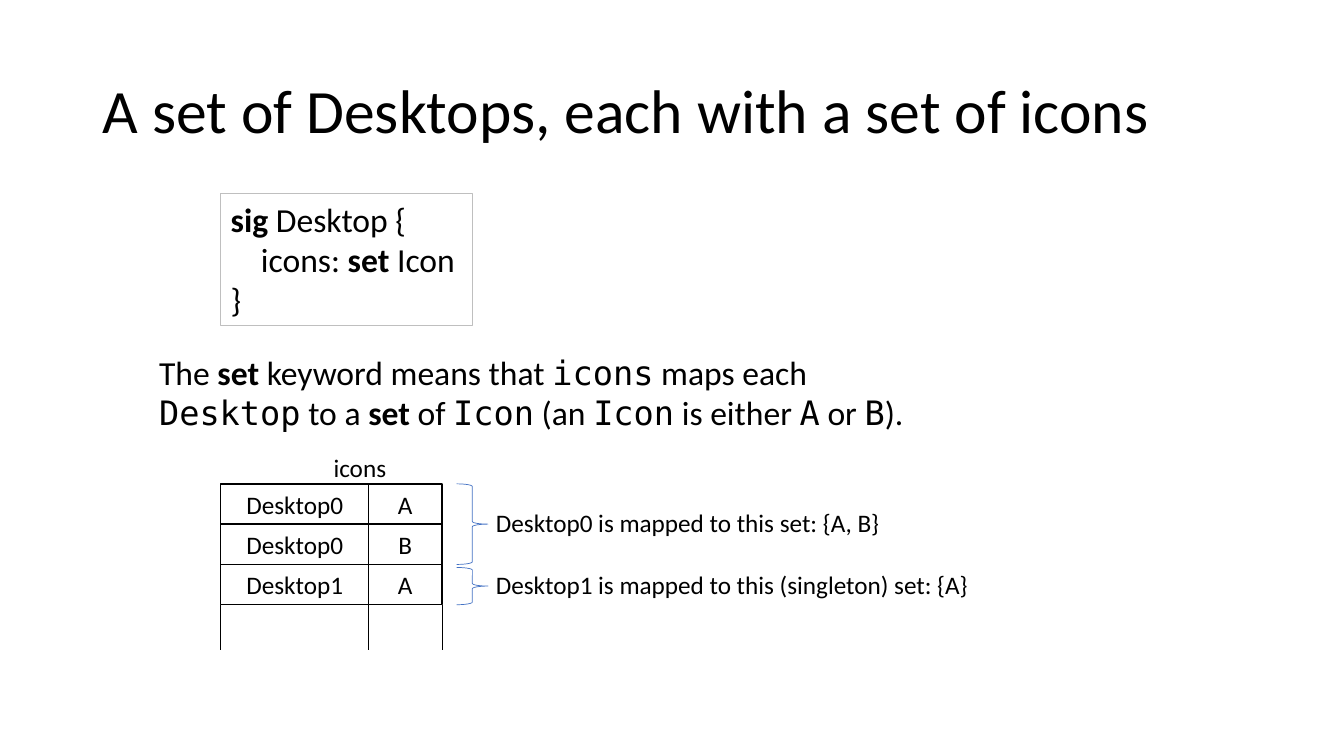
from dataclasses import dataclass

from lxml.etree import SubElement
from pptx import Presentation
from pptx.dml.color import RGBColor
from pptx.enum.shapes import MSO_CONNECTOR, MSO_SHAPE
from pptx.enum.text import MSO_ANCHOR, MSO_AUTO_SIZE, PP_ALIGN
from pptx.oxml.ns import qn
from pptx.util import Inches, Pt

WIDTH, HEIGHT = 13.33, 7.5
SANS, MONO = "Calibri", "DejaVu Sans Mono"
BLACK, WHITE, GREY, BLUE = "000000", "FFFFFF", "BFBFBF", "4472C4"

# Relation table, in percent of the slide
LEFT, TOP, ROW_H = 16.43, 64, 5.33
COL_W = [11, 5.45]
ROWS = [("Desktop0", "A"), ("Desktop0", "B"), ("Desktop1", "A")]
TAIL_H = 6
BRACE_LEFT, BRACE_W, BRACE_GAP, LABEL_LEFT = 33.98, 2.33, 0.4, 36.16


@dataclass
class Box:
    """A rectangle in percent of the slide's width and height."""
    left: float
    top: float
    width: float
    height: float

    def emu(self) -> tuple:
        return (across(self.left), down(self.top),
                across(self.width), down(self.height))


@dataclass
class Run:
    text: str
    bold: bool = False
    font: str = SANS


@dataclass
class Mapping:
    first_row: int
    row_count: int
    label: str
    label_width: float


MAPPINGS = [
    Mapping(0, 2, "Desktop0 is mapped to this set: {A, B}", 30.76),
    Mapping(2, 1, "Desktop1 is mapped to this (singleton) set: {A}", 36.9),
]
CODE = [
    [Run("sig", bold=True), Run(" Desktop {")],
    [Run("icons: "), Run("set", bold=True), Run(" Icon")],
    [Run("}")],
]
EXPLANATION = [
    Run("The "), Run("set", bold=True), Run(" keyword means that "),
    Run("icons", font=MONO), Run(" maps each "), Run("Desktop", font=MONO),
    Run(" to a "), Run("set", bold=True), Run(" of "), Run("Icon", font=MONO),
    Run(" (an "), Run("Icon", font=MONO), Run(" is either "),
    Run("A", font=MONO), Run(" or "), Run("B", font=MONO), Run(")."),
]


def across(percent: float) -> int:
    return Inches(WIDTH * percent / 100)


def down(percent: float) -> int:
    return Inches(HEIGHT * percent / 100)


def rgb(value: str) -> RGBColor:
    return RGBColor.from_string(value)


def write(p, runs: list[Run], size: float) -> None:
    for run in runs:
        r = p.add_run()
        r.text = run.text
        r.font.name, r.font.size, r.font.bold = run.font, Pt(size), run.bold
        r.font.color.rgb = rgb(BLACK)


def add_text(slide, box: Box, runs: list[Run], size: float, wrap: bool = True) -> None:
    tf = slide.shapes.add_textbox(*box.emu()).text_frame
    tf.word_wrap = wrap
    tf.auto_size = MSO_AUTO_SIZE.SHAPE_TO_FIT_TEXT
    write(tf.paragraphs[0], runs, size)


def add_outline(slide, kind, box: Box, line: str, weight: float, fill: str = ""):
    sp = slide.shapes.add_shape(kind, *box.emu())
    sp.shadow.inherit = False
    sp.line.color.rgb, sp.line.width = rgb(line), Pt(weight)
    if fill:
        sp.fill.solid()
        sp.fill.fore_color.rgb = rgb(fill)
    else:
        sp.fill.background()
    return sp


def add_title(slide, text: str) -> None:
    title = slide.shapes.title
    title.left, title.top, title.width, title.height = Box(6.9, 5.33, 86.27, 19.33).emu()
    tf = title.text_frame
    tf.vertical_anchor = MSO_ANCHOR.MIDDLE
    p = tf.paragraphs[0]
    p.alignment, p.line_spacing = PP_ALIGN.LEFT, 0.9
    write(p, [Run(text)], 44)


def add_code(slide) -> None:
    sp = add_outline(slide, MSO_SHAPE.RECTANGLE, Box(LEFT, 25.6, 18.75, 17.47), GREY, 0.75)
    tf = sp.text_frame
    tf.vertical_anchor = MSO_ANCHOR.TOP
    tf.auto_size = MSO_AUTO_SIZE.SHAPE_TO_FIT_TEXT
    for i, runs in enumerate(CODE):
        p = tf.paragraphs[0] if i == 0 else tf.add_paragraph()
        p.alignment = PP_ALIGN.LEFT
        write(p, runs, 24)
    # Indent the field declaration
    tf.paragraphs[1]._p.get_or_add_pPr().set("marL", str(Inches(0.3)))


def add_relation(slide) -> None:
    edges = [LEFT, LEFT + COL_W[0], LEFT + sum(COL_W)]
    # Cells
    for col, width in enumerate(COL_W):
        for row, values in enumerate(ROWS):
            box = Box(edges[col], TOP + row * ROW_H, width, ROW_H)
            sp = add_outline(slide, MSO_SHAPE.RECTANGLE, box, BLACK, 1, WHITE)
            tf = sp.text_frame
            tf.vertical_anchor = MSO_ANCHOR.MIDDLE
            tf.paragraphs[0].alignment = PP_ALIGN.CENTER
            write(tf.paragraphs[0], [Run(values[col])], 18)
    # Open column lines below the last row
    bottom = TOP + len(ROWS) * ROW_H
    for edge in edges:
        line = slide.shapes.add_connector(
            MSO_CONNECTOR.STRAIGHT, across(edge), down(bottom),
            across(edge), down(bottom + TAIL_H))
        line.line.color.rgb, line.line.width = rgb(BLACK), Pt(0.5)
        SubElement(line._element.spPr, qn("a:effectLst"))
    # Heading
    add_text(slide, Box(24.08, 59.2, 5.48, ROW_H), [Run("icons")], 18, wrap=False)


def add_mapping(slide, mapping: Mapping) -> None:
    gap = BRACE_GAP if mapping.first_row else 0
    top = TOP + mapping.first_row * ROW_H + gap
    height = mapping.row_count * ROW_H - gap
    add_outline(slide, MSO_SHAPE.RIGHT_BRACE,
                Box(BRACE_LEFT, top, BRACE_W, height), BLUE, 0.5)
    label_top = top + (height - ROW_H) / 2 - 0.2
    add_text(slide, Box(LABEL_LEFT, label_top, mapping.label_width, ROW_H),
             [Run(mapping.label)], 18)


def main() -> None:
    prs = Presentation()
    prs.slide_width, prs.slide_height = Inches(WIDTH), Inches(HEIGHT)
    slide = prs.slides.add_slide(prs.slide_layouts[5])
    add_title(slide, "A set of Desktops, each with a set of icons")
    add_code(slide)
    add_text(slide, Box(11.1, 45.87, 59.04, 12.13), EXPLANATION, 24)
    add_relation(slide)
    for mapping in MAPPINGS:
        add_mapping(slide, mapping)
    prs.save("out.pptx")


if __name__ == "__main__":
    main()
